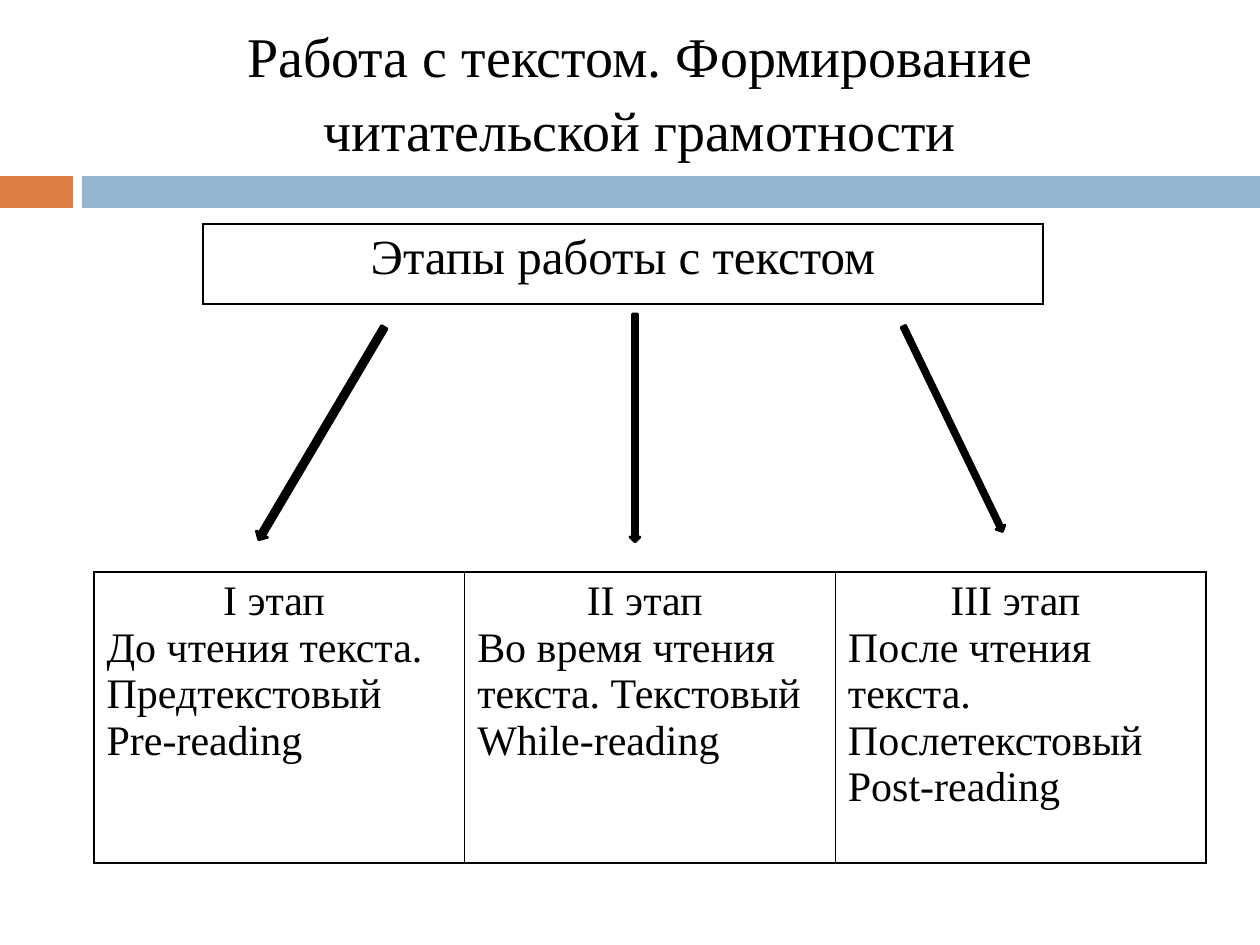
from lxml import etree
from pptx import Presentation
from pptx import util as u
from pptx.dml import color
from pptx.enum import shapes, text
from pptx.oxml import ns

PX = 914400 / 126
THEME = {
    "font": "Times New Roman",
    "ink": "000000",
    "bar": "94B6D2",
    "tab": "DD8047",
    "title": 32,
    "head": 28,
    "body": 24,
}
MID = text.PP_ALIGN.CENTER
LEFT = text.PP_ALIGN.LEFT


def px(*vals):
    return [u.Emu(round(v * PX)) for v in vals]


def rgb(name):
    return color.RGBColor.from_string(THEME[name])


def assign(obj, **vals):
    for key, val in vals.items():
        setattr(obj, key, val)


def write(frame, lines, size, gap=1.0):
    for i, (line, align) in enumerate(lines):
        para = frame.paragraphs[0] if i == 0 else frame.add_paragraph()
        assign(para, alignment=align, line_spacing=gap)
        run = para.add_run()
        run.text = line
        assign(run.font, name=THEME["font"], size=u.Pt(THEME[size]))
        run.font.color.rgb = rgb("ink")


def solid(slide, kind, box, fill, turn=0, edge=0):
    shape = slide.shapes.add_shape(kind, *px(*box))
    shape.shadow.inherit = False
    shape.rotation = turn
    shape.fill.solid()
    shape.fill.fore_color.rgb = rgb(fill)
    if edge:
        shape.line.color.rgb = rgb(fill)
        shape.line.width = u.Pt(edge)
    else:
        shape.line.fill.background()


def border(cell):
    props = cell._tc.get_or_add_tcPr()
    for i, side in enumerate(("lnL", "lnR", "lnT", "lnB")):
        line = etree.Element(ns.qn("a:" + side), w=str(u.Pt(1)))
        fill = etree.SubElement(line, ns.qn("a:solidFill"))
        etree.SubElement(fill, ns.qn("a:srgbClr"), val=THEME["ink"])
        props.insert(i, line)


def grid(slide, box, cells, size):
    table = slide.shapes.add_table(1, len(cells), *px(*box)).table
    assign(table, first_row=False, horz_banding=False)
    for cell, lines in zip(table.rows[0].cells, cells):
        cell.fill.background()
        border(cell)
        write(cell.text_frame, lines, size)


def title(slide, box, words):
    frame = slide.shapes.add_textbox(*px(*box)).text_frame
    assign(frame, word_wrap=True, vertical_anchor=text.MSO_ANCHOR.MIDDLE)
    write(frame, [(words, MID)], "title", 1.1)


def band(slide, box):
    left, top, width, height = box
    tab, gap = 73, 9
    rect = shapes.MSO_SHAPE.RECTANGLE
    solid(slide, rect, (left, top, tab, height), "tab")
    solid(slide, rect, (left + tab + gap, top, width - tab - gap, height), "bar")


def arrows(slide, box):
    left, top = box[:2]
    specs = [
        (0, 0, 13, 247, 30.6),
        (315, 4, 10, 228, 0),
        (633, 5, 10, 228, 334.2),
    ]
    for x, y, width, height, turn in specs:
        solid(slide, shapes.MSO_SHAPE.DOWN_ARROW,
              (left + x, top + y, width, height), "ink", turn, 1.5)


def stages(slide, box):
    steps = [
        ("I этап ", "До чтения текста. Предтекстовый", "Pre-reading"),
        ("II этап ", "Во время чтения текста. Текстовый", "While-reading"),
        ("III этап ", "После чтения текста. Послетекстовый", "Post-reading"),
    ]
    cells = [list(zip(step, (MID, LEFT, LEFT))) for step in steps]
    grid(slide, box, cells, "body")


def main():
    deck = Presentation()
    wide, high = px(1260, 945)
    assign(deck, slide_width=wide, slide_height=high)
    slide = deck.slides.add_slide(deck.slide_layouts[6])
    band(slide, (0, 176, 1260, 32))
    title(slide, (84, 32, 1112, 113),
          "Работа с текстом. Формирование читательской грамотности")
    stages(slide, (94, 572, 1112, 291))
    arrows(slide, (315, 310, 643, 247))
    grid(slide, (203, 224, 840, 80), [[("Этапы работы с текстом", MID)]], "head")
    deck.save("out.pptx")


if __name__ == "__main__":
    main()
